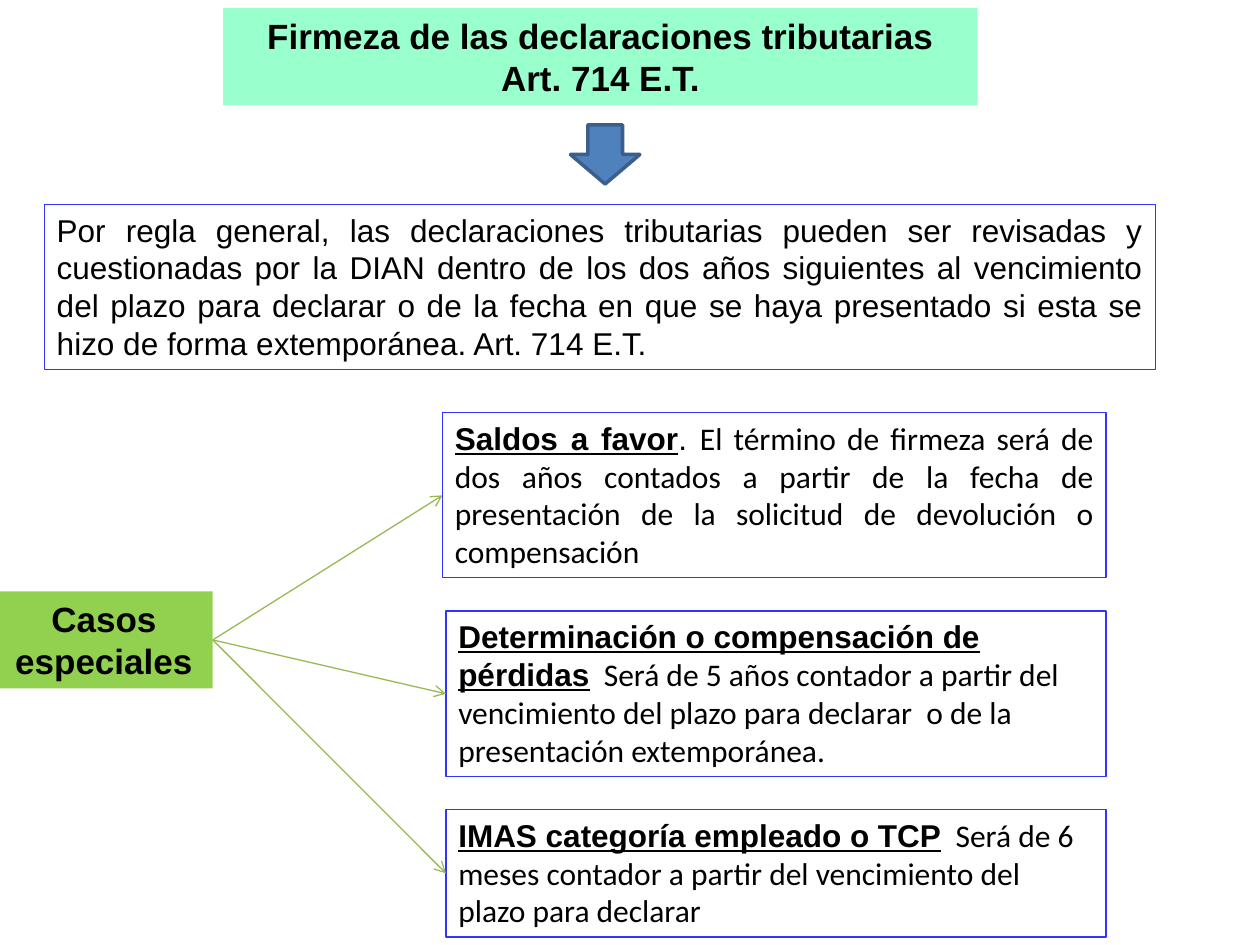
from dataclasses import dataclass

from lxml.etree import SubElement
from pptx import Presentation
from pptx.dml.color import RGBColor
from pptx.enum.shapes import MSO_CONNECTOR, MSO_SHAPE
from pptx.enum.text import MSO_ANCHOR, MSO_AUTO_SIZE, PP_ALIGN as Align
from pptx.oxml.ns import qn
from pptx.util import Cm, Pt


@dataclass(frozen=True)
class Theme:
    heading_font: str = "Arial"
    detail_font: str = "Calibri"
    heading_size: int = 20
    text_size: int = 18
    text: str = "000000"
    title_fill: str = "99FFCC"
    label_fill: str = "92D050"
    box_line: str = "3333FF"
    arrow_fill: str = "4F81BD"
    arrow_line: str = "3A5F8C"
    connector: str = "98B955"
    thin: float = 0.75
    thick: float = 2


THEME = Theme()

# Content: each paragraph is a list of (text, style) runs
TITLE = [[("Firmeza de las declaraciones tributarias", "heading")],
         [("Art. 714 E.T.", "heading")]]
RULE = [[("Por regla general, las declaraciones tributarias pueden ser revisadas y "
          "cuestionadas por la DIAN dentro de los dos años siguientes al vencimiento "
          "del plazo para declarar o de la fecha en que se haya presentado si esta se "
          "hizo de forma extemporánea. Art. 714 E.T.", "plain")]]
LABEL = [[("Casos especiales", "heading")]]
CASES = [
    ("Saldos a favor", (". ", "plain"),
     "El término de firmeza será de dos años contados a partir de la fecha de "
     "presentación de la solicitud de devolución o compensación", Align.JUSTIFY),
    ("Determinación o compensación de pérdidas", ("  ", "gap"),
     "Será de 5 años contador a partir del vencimiento del plazo para declarar  "
     "o de la presentación extemporánea.", Align.LEFT),
    ("IMAS categoría empleado o TCP", ("  ", "gap"),
     "Será de 6 meses contador a partir del vencimiento del plazo para declarar",
     Align.LEFT),
]

# Run styles: font, size, bold, underline
STYLES = {
    "heading": (THEME.heading_font, THEME.heading_size, True, False),
    "plain": (THEME.heading_font, THEME.text_size, False, False),
    "term": (THEME.heading_font, THEME.text_size, True, True),
    "gap": (THEME.detail_font, THEME.text_size, True, False),
    "detail": (THEME.detail_font, THEME.text_size, False, False),
}

# Places in centimetres: left, top, width, height
TITLE_AT = (4.5, 0.16, 15.21, 1.96)
ARROW_AT = (11.5, 2.52, 1.4, 1.19)
RULE_AT = (0.89, 4.12, 22.4, 3.33)
LABEL_AT = (-0.1, 11.92, 4.39, 1.96)
CASES_RIGHT, CASES_TOP, CASES_PITCH = 22.3, 8.32, 4
CASE_SIZES = [(13.38, 3.33), (13.31, 3.33), (13.31, 2.57)]
LEFT_SITE, RIGHT_SITE = 1, 3


def color(value):
    return RGBColor.from_string(value)


def place(shape, at):
    shape.left, shape.top, shape.width, shape.height = map(Cm, at)


def paint(shape, fill=None, line=None, width=THEME.thin):
    if fill:
        shape.fill.solid()
        shape.fill.fore_color.rgb = color(fill)
    if line:
        shape.line.color.rgb = color(line)
        shape.line.width = Pt(width)


def write(shape, paragraphs, align):
    frame = shape.text_frame
    frame.word_wrap = True
    frame.auto_size = MSO_AUTO_SIZE.NONE
    frame.vertical_anchor = MSO_ANCHOR.TOP
    for index, runs in enumerate(paragraphs):
        paragraph = frame.add_paragraph() if index else frame.paragraphs[0]
        properties = paragraph._p.get_or_add_pPr()
        properties.set("marL", "0")
        properties.set("indent", "0")
        SubElement(properties, qn("a:buNone"))
        paragraph.alignment = align
        paragraph.space_before = Pt(0)
        for text, style in runs:
            run = paragraph.add_run()
            run.text = text
            font = run.font
            font.name, size, font.bold, font.underline = STYLES[style]
            font.size = Pt(size)
            font.color.rgb = color(THEME.text)


def add_text(slide, at, paragraphs, align):
    box = slide.shapes.add_textbox(*map(Cm, at))
    write(box, paragraphs, align)
    return box


def connect(slide, start, end):
    connector = slide.shapes.add_connector(MSO_CONNECTOR.STRAIGHT, 0, 0, 0, 0)
    connector.begin_connect(start, RIGHT_SITE)
    connector.end_connect(end, LEFT_SITE)
    connector.line.color.rgb = color(THEME.connector)
    connector.line.width = Pt(THEME.thin)
    SubElement(connector.line._get_or_add_ln(), qn("a:tailEnd"), type="arrow")
    SubElement(connector._element.spPr, qn("a:effectLst"))


def main():
    presentation = Presentation()
    presentation.slide_width, presentation.slide_height = Cm(25.4), Cm(19.05)
    slide = presentation.slides.add_slide(presentation.slide_layouts[1])

    # Title and general rule
    title, rule = slide.placeholders
    place(title, TITLE_AT)
    paint(title, fill=THEME.title_fill)
    write(title, TITLE, Align.CENTER)
    place(rule, RULE_AT)
    paint(rule, line=THEME.box_line)
    write(rule, RULE, Align.JUSTIFY)

    # Arrow from the title to the rule
    arrow = slide.shapes.add_shape(MSO_SHAPE.DOWN_ARROW, *map(Cm, ARROW_AT))
    arrow.shadow.inherit = False
    paint(arrow, THEME.arrow_fill, THEME.arrow_line, THEME.thick)

    # Special cases, each joined to the label
    label = add_text(slide, LABEL_AT, LABEL, Align.CENTER)
    paint(label, fill=THEME.label_fill)
    for index, (term, separator, detail, align) in enumerate(CASES):
        width, height = CASE_SIZES[index]
        at = (CASES_RIGHT - width, CASES_TOP + index * CASES_PITCH, width, height)
        runs = [(term, "term"), separator, (detail, "detail")]
        case = add_text(slide, at, [runs], align)
        paint(case, line=THEME.box_line)
        connect(slide, label, case)

    presentation.save("out.pptx")


if __name__ == "__main__":
    main()
